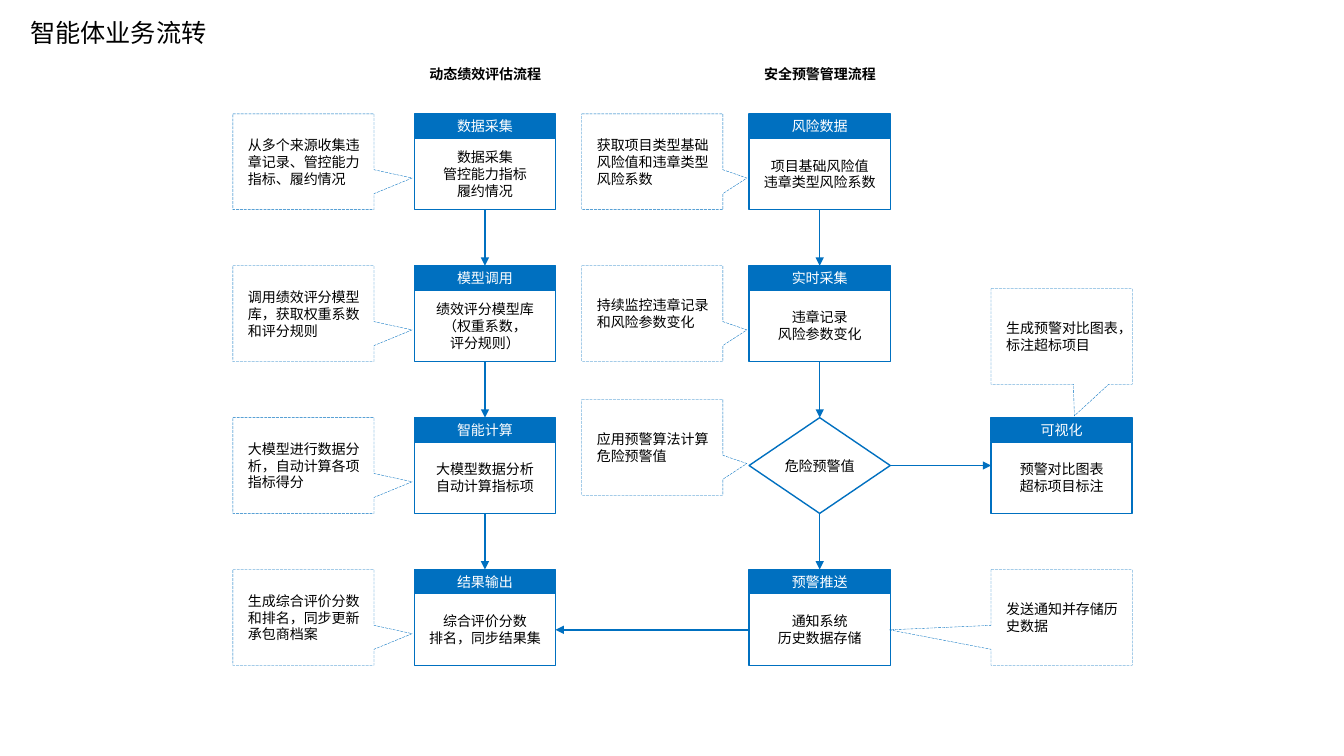
from dataclasses import dataclass

from lxml import etree
from pptx import Presentation
from pptx.dml.color import RGBColor
from pptx.enum.dml import MSO_LINE
from pptx.enum.shapes import MSO_CONNECTOR, MSO_SHAPE
from pptx.enum.text import MSO_ANCHOR, PP_ALIGN
from pptx.oxml.ns import qn
from pptx.util import Inches, Pt

RECT, DIAMOND = MSO_SHAPE.RECTANGLE, MSO_SHAPE.DIAMOND
CALLOUT, STRAIGHT = MSO_SHAPE.RECTANGULAR_CALLOUT, MSO_CONNECTOR.STRAIGHT
LONG_DASH = MSO_LINE.LONG_DASH
LEFT, CENTER = PP_ALIGN.LEFT, PP_ALIGN.CENTER
TOP, MIDDLE = MSO_ANCHOR.TOP, MSO_ANCHOR.MIDDLE


@dataclass(frozen=True)
class Theme:
    font: str = "Noto Sans CJK SC"
    blue: RGBColor = RGBColor(0x00, 0x70, 0xC0)
    black: RGBColor = RGBColor(0x00, 0x00, 0x00)
    white: RGBColor = RGBColor(0xFF, 0xFF, 0xFF)
    title: int = 18
    body: int = 10
    border: float = 1
    hairline: float = 0.25


class FlowSlide:
    """Draws flowchart elements on a slide, placed by grid column and row."""

    COLUMNS = (2.31, 4.11, 5.77, 7.43, 9.83)
    TOP_ROW, ROW_PITCH = 1.13, 4.52 / 3
    WIDTH, HEIGHT, HEAD = 1.4, 0.95, 0.24

    def __init__(self, s, theme):
        self.s, self.theme = s, theme

    def x(self, col, share=0):
        return Inches(self.COLUMNS[col] + share * self.WIDTH)

    def y(self, row, share=0):
        return Inches(self.TOP_ROW + row * self.ROW_PITCH + share * self.HEIGHT)

    def put_text(self, tf, text, color, size=None, align=CENTER, anchor=MIDDLE,
                 bold=False, wrap=True):
        tf.word_wrap, tf.vertical_anchor = wrap, anchor
        tf.text = text
        for p in tf.paragraphs:
            p.alignment = align
            p.font.name = self.theme.font
            p.font.size = Pt(size or self.theme.body)
            p.font.bold = bold
            p.font.color.rgb = color
            etree.SubElement(p._p.pPr.find(qn("a:defRPr")), qn("a:ea"),
                             typeface=self.theme.font)

    def shape(self, shapes, kind, left, top, height, fill=None, width=None):
        sp = shapes.add_shape(kind, left, top, Inches(self.WIDTH), Inches(height))
        sp.shadow.inherit = False
        if fill is None:
            sp.fill.background()
        else:
            sp.fill.solid()
            sp.fill.fore_color.rgb = fill
        sp.line.color.rgb = self.theme.blue
        sp.line.width = Pt(width or self.theme.border)
        return sp

    def node(self, col, row, head, body):
        group = self.s.shapes.add_group_shape()
        left, top = self.x(col), self.y(row)
        box = self.shape(group.shapes, RECT, left, top + Inches(self.HEAD),
                         self.HEIGHT - self.HEAD)
        self.put_text(box.text_frame, body, self.theme.black)
        bar = self.shape(group.shapes, RECT, left, top, self.HEAD, self.theme.blue)
        self.put_text(bar.text_frame, head, self.theme.white)

    def decision(self, col, row, text):
        sp = self.shape(self.s.shapes, DIAMOND, self.x(col), self.y(row), self.HEIGHT)
        self.put_text(sp.text_frame, text, self.theme.black, wrap=False)

    def note(self, col, row, text, tip):
        sp = self.shape(self.s.shapes, CALLOUT, self.x(col), self.y(row),
                        self.HEIGHT, width=self.theme.hairline)
        sp.line.dash_style = LONG_DASH
        sp.adjustments[0], sp.adjustments[1] = tip
        tf = sp.text_frame
        tf.margin_left, tf.margin_right = Inches(0.15), Inches(0.13)
        self.put_text(tf, text, self.theme.black, align=LEFT)

    def label(self, left, top, width, height, text, **style):
        tb = self.s.shapes.add_textbox(left, top, Inches(width), Inches(height))
        self.put_text(tb.text_frame, text, self.theme.black, anchor=TOP, wrap=False, **style)

    def arrow(self, x1, y1, x2, y2):
        line = self.s.shapes.add_connector(STRAIGHT, x1, y1, x2, y2)
        line.line.color.rgb = self.theme.blue
        line.line.width = Pt(self.theme.border)
        sppr = line._element.spPr
        etree.SubElement(sppr.find(qn("a:ln")), qn("a:tailEnd"), type="triangle")
        etree.SubElement(sppr, qn("a:effectLst"))


NODES = (
    (1, 0, "数据采集", "数据采集\n管控能力指标\n履约情况"),
    (1, 1, "模型调用", "绩效评分模型库\n（权重系数，\n评分规则）"),
    (1, 2, "智能计算", "大模型数据分析\n自动计算指标项"),
    (1, 3, "结果输出", "综合评价分数\n排名，同步结果集"),
    (3, 0, "风险数据", "项目基础风险值\n违章类型风险系数"),
    (3, 1, "实时采集", "违章记录\n风险参数变化"),
    (3, 3, "预警推送", "通知系统\n历史数据存储"),
    (4, 2, "可视化", "预警对比图表\n超标项目标注"),
)
FAR_TIP, NEAR_TIP = (0.77, 0.17), (0.67, 0.17)
NOTES = (
    (0, 0, "从多个来源收集违章记录、管控能力指标、履约情况", FAR_TIP),
    (0, 1, "调用绩效评分模型库，获取权重系数和评分规则", FAR_TIP),
    (0, 2, "大模型进行数据分析，自动计算各项指标得分", FAR_TIP),
    (0, 3, "生成综合评价分数和排名，同步更新承包商档案", FAR_TIP),
    (2, 0, "获取项目类型基础风险值和违章类型风险系数", NEAR_TIP),
    (2, 1, "持续监控违章记录和风险参数变化", NEAR_TIP),
    (2, 1.88, "应用预警算法计算危险预警值", NEAR_TIP),
    (4, 1.15, "生成预警对比图表，标注超标项目", (0.09, 0.83)),
    (4, 3, "发送通知并存储历史数据", (-1.22, 0.13)),
)
FLOWS = ((1, "动态绩效评估流程"), (3, "安全预警管理流程"))


def main():
    prs = Presentation()
    prs.slide_width, prs.slide_height = Inches(13.33), Inches(7.5)
    theme = Theme()
    flow = FlowSlide(prs.slides.add_slide(prs.slide_layouts[6]), theme)

    flow.label(Inches(0.2), Inches(0.12), 1.97, 0.4, "智能体业务流转",
               size=theme.title, align=LEFT)
    for node in NODES:
        flow.node(*node)
    flow.decision(3, 2, "危险预警值")
    for col, heading in FLOWS:
        flow.label(flow.x(col, 0.03), flow.y(-0.35), 1.32, 0.27, heading, bold=True)
        for row in range(3):
            flow.arrow(flow.x(col, 0.5), flow.y(row, 1), flow.x(col, 0.5), flow.y(row + 1))
    flow.arrow(flow.x(3), flow.y(3, 0.63), flow.x(1, 1), flow.y(3, 0.63))
    flow.arrow(flow.x(3, 1), flow.y(2, 0.5), flow.x(4), flow.y(2, 0.5))
    for note in NOTES:
        flow.note(*note)
    prs.save("out.pptx")


if __name__ == "__main__":
    main()
